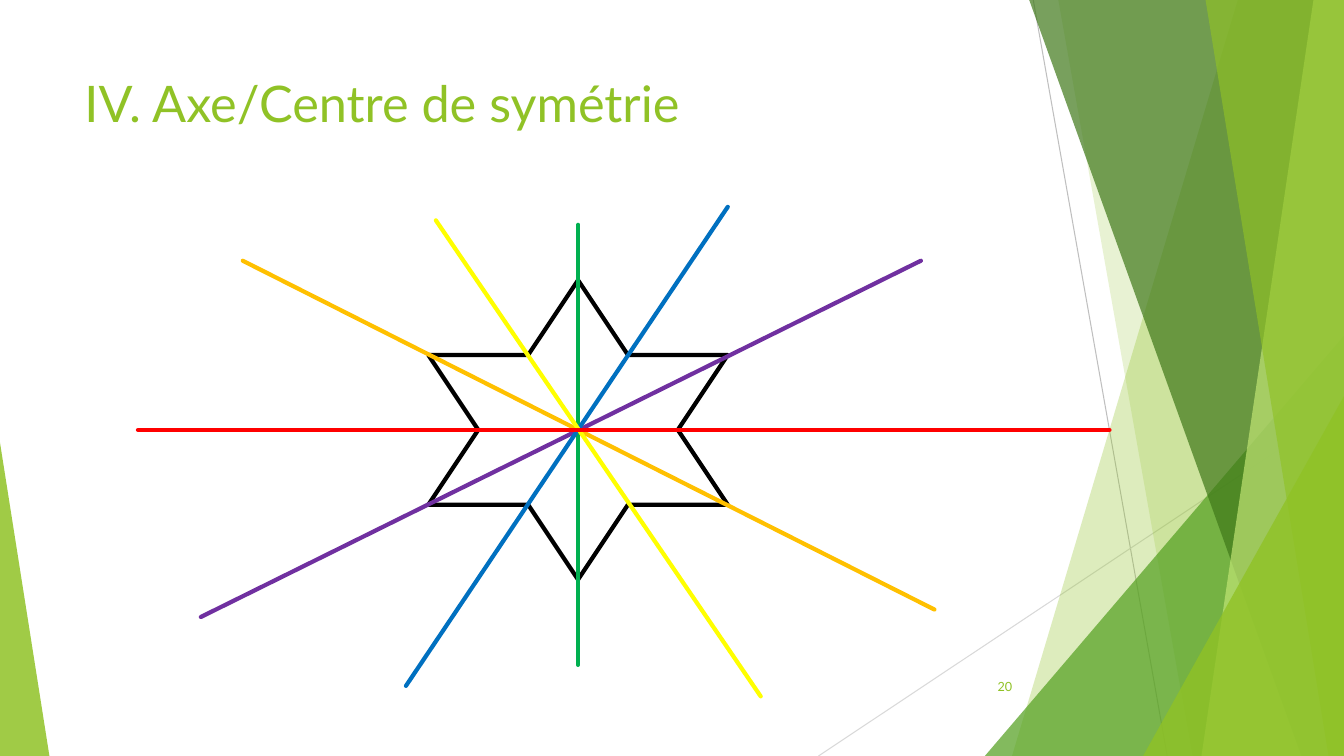
from lxml import etree
from pptx import Presentation
from pptx.dml.color import RGBColor
from pptx.enum.shapes import MSO_CONNECTOR, MSO_SHAPE
from pptx.enum.text import MSO_ANCHOR, PP_ALIGN
from pptx.oxml.ns import qn
from pptx.util import Inches, Pt

STRAIGHT = MSO_CONNECTOR.STRAIGHT
TRIANGLE, STAR = MSO_SHAPE.ISOSCELES_TRIANGLE, MSO_SHAPE.STAR_6_POINT
TOP, MIDDLE = MSO_ANCHOR.TOP, MSO_ANCHOR.MIDDLE
LEFT, RIGHT = PP_ALIGN.LEFT, PP_ALIGN.RIGHT
FONT = "Lato"
WIDTH, HEIGHT = Inches(13.333), Inches(7.5)

COLORS = {
    "lime": "90C226", "leaf": "54A021", "forest": "3F7819", "pale": "C0E474",
    "grey": "BFBFBF", "light_grey": "D9D9D9", "black": "000000",
    "orange": "FFC000", "green": "00B050", "purple": "7030A0",
    "blue": "0070C0", "yellow": "FFFF00", "red": "FF0000",
}

# Thin lines: color, start and end in percent of the box
THIN_LINES = [
    ("grey", (76.88, 0), (86.85, 100)),
    ("light_grey", (100, 53.73), (60.9, 100)),
]
# Bands reaching the right edge: top left x, bottom left x (percent), color, opacity
BACK_BANDS = [(92.1, 75.3, "lime", 30), (78.75, 88.73, "lime", 20)]
FRONT_BANDS = [
    (76.58, 96.83, "forest", 70),
    (97.73, 89.4, "pale", 70),
    (89.7, 98.85, "lime", 65),
]
# Axes: color, ends measured from the star's centre in half star sides
AXES = [
    ("orange", (-2.24, -1.13), (2.38, 1.2)),
    ("green", (0, 1.57), (0, -1.37)),
    ("purple", (-2.52, 1.25), (2.29, -1.13)),
    ("blue", (-1.15, 1.71), (1, -1.49)),
    ("yellow", (1.22, 1.78), (-0.95, -1.4)),
    ("red", (-2.94, 0), (3.55, 0)),
]


def rgb(name):
    return RGBColor.from_string(COLORS[name])


def add_line(slide, start, end, color, width):
    line = slide.shapes.add_connector(STRAIGHT, *map(round, start + end))
    line.line.color.rgb = rgb(color)
    line.line.width = Pt(width)
    line.line._get_or_add_ln().set("cap", "rnd")
    etree.SubElement(line._element.spPr, qn("a:effectLst"))


def paint(shape, color, opacity):
    shape.shadow.inherit = False
    shape.line.fill.background()
    shape.fill.solid()
    shape.fill.fore_color.rgb = rgb(color)
    fill_color = shape._element.spPr.find(qn("a:solidFill"))[0]
    etree.SubElement(fill_color, qn("a:alpha"), val=str(opacity * 1000))


def add_facets(slide, left, top, width, height):
    def point(x, y):
        return left + width * x / 100, top + height * y / 100

    def add_bands(bands):
        for top_x, bottom_x, color, opacity in bands:
            builder = slide.shapes.build_freeform(*map(round, point(top_x, 0)))
            corners = [point(100, 0), point(100, 100), point(bottom_x, 100)]
            builder.add_line_segments([tuple(map(round, c)) for c in corners])
            paint(builder.convert_to_shape(), color, opacity)

    def add_corner(start_x, end_x, start_y, apex, color, opacity):
        x, y = point(start_x, start_y)
        end, bottom = point(end_x, 100)
        corner = slide.shapes.add_shape(
            TRIANGLE, *map(round, (x, y, end - x, bottom - y)))
        corner.adjustments[0] = apex
        paint(corner, color, opacity)

    for color, start, end in THIN_LINES:
        add_line(slide, point(*start), point(*end), color, 0.75)
    add_bands(BACK_BANDS)
    add_corner(73.28, 100, 44.4, 1, "leaf", 72)
    add_bands(FRONT_BANDS)
    add_corner(85.05, 100, 52.4, 1, "lime", 80)
    add_corner(0, 3.68, 58.53, 0, "lime", 85)


def add_text(slide, box, text, size, anchor, alignment):
    text_frame = slide.shapes.add_textbox(*box).text_frame
    text_frame.word_wrap = True
    text_frame.vertical_anchor = anchor
    text_frame.text = text
    paragraph = text_frame.paragraphs[0]
    paragraph.alignment = alignment
    paragraph.font.name = FONT
    paragraph.font.size = Pt(size)
    paragraph.font.color.rgb = rgb("lime")


def add_star_with_axes(slide, left, top, side):
    star = slide.shapes.add_shape(STAR, left, top, side, side)
    star.shadow.inherit = False
    star.fill.background()
    star.line.color.rgb = rgb("black")
    star.line.width = Pt(3)

    half = side / 2

    def from_centre(x, y):
        return left + half * (1 + x), top + half * (1 + y)

    for color, start, end in AXES:
        add_line(slide, from_centre(*start), from_centre(*end), color, 3)


def main():
    presentation = Presentation()
    presentation.slide_width, presentation.slide_height = WIDTH, HEIGHT
    slide = presentation.slides.add_slide(presentation.slide_layouts[6])

    # Background decoration
    add_facets(slide, 0, 0, WIDTH, HEIGHT)

    # Title and slide number
    title_box = [Inches(n) for n in (0.74, 0.67, 9.4, 1.44)]
    add_text(slide, title_box, "IV. Axe/Centre de symétrie", 36, TOP, LEFT)
    number_box = [Inches(n) for n in (9.39, 6.61, 0.75, 0.4)]
    add_text(slide, number_box, "20", 9, MIDDLE, RIGHT)

    # Star and its axes of symmetry
    add_star_with_axes(slide, Inches(4.25), Inches(2.78), Inches(2.97))

    presentation.save("out.pptx")


if __name__ == "__main__":
    main()
